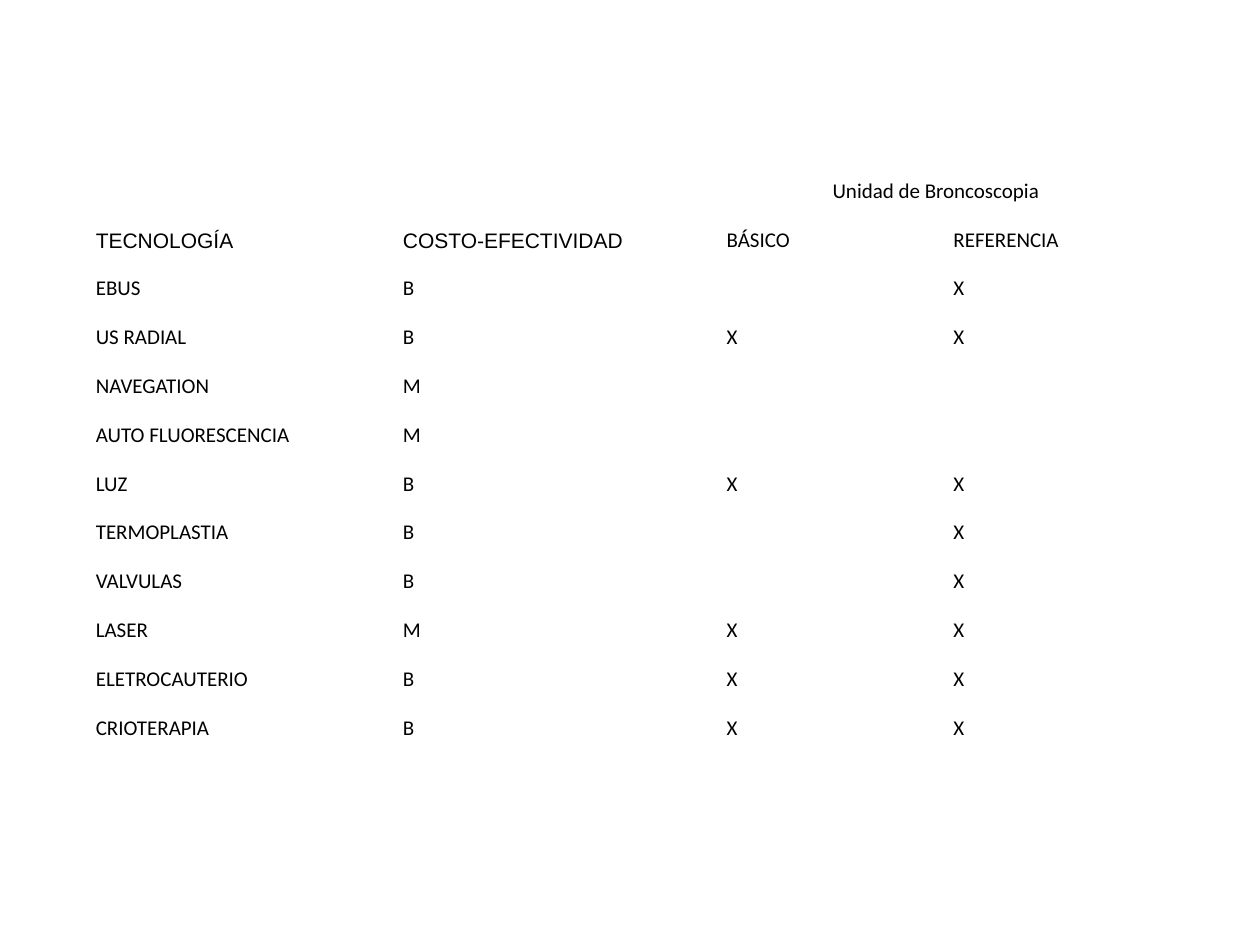
from pptx import Presentation
from pptx.util import Pt
from pptx.dml.color import RGBColor as RGB
from pptx.enum.text import PP_ALIGN as AL, MSO_ANCHOR as ANC

COLORS = {"text": "000000"}
GROUP = "Unidad de Broncoscopia"
HEADS = [("TECNOLOGÍA", "Arial"), ("COSTO-EFECTIVIDAD", "Arial"),
         ("BÁSICO", "Calibri"), ("REFERENCIA", "Calibri")]
ROWS = [
    ("EBUS", "B", "", "X"),
    ("US RADIAL", "B", "X", "X"),
    ("NAVEGATION", "M", "", ""),
    ("AUTO FLUORESCENCIA", "M", "", ""),
    ("LUZ", "B", "X", "X"),
    ("TERMOPLASTIA", "B", "", "X"),
    ("VALVULAS", "B", "", "X"),
    ("LASER", "M", "X", "X"),
    ("ELETROCAUTERIO", "B", "X", "X"),
    ("CRIOTERAPIA", "B", "X", "X"),
]
WIDTHS = [175.5, 185, 129.6, 111]
LEFT, TOP, HIGH = 54, 88.6, 27.9


def write(cell, text, font="Calibri", size=12, color="text", align=AL.LEFT):
    cell.fill.background()
    cell.vertical_anchor = ANC.BOTTOM
    cell.margin_left = cell.margin_right = cell.margin_top = Pt(0.75)
    cell.margin_bottom = Pt(0)
    if not text:
        return
    para = cell.text_frame.paragraphs[0]
    para.alignment = align
    run = para.add_run()
    run.text = text
    run.font.name = font
    run.font.size = Pt(size)
    run.font.color.rgb = RGB.from_string(COLORS[color])


def main():
    prs = Presentation()
    prs.slide_width, prs.slide_height = Pt(720), Pt(540)
    slide = prs.slides.add_slide(prs.slide_layouts[6])
    count = len(ROWS) + 2
    table = slide.shapes.add_table(count, len(WIDTHS), Pt(LEFT), Pt(TOP),
                                   Pt(sum(WIDTHS)), Pt(HIGH * count)).table
    table.first_row = table.horz_banding = False
    for col, width in zip(table.columns, WIDTHS):
        col.width = Pt(width)
    for row in table.rows:
        row.height = Pt(HIGH)

    table.cell(0, 2).merge(table.cell(0, 3))
    for c, text in enumerate(("", "", GROUP, "")):
        write(table.cell(0, c), text, align=AL.CENTER)
    for c, (text, font) in enumerate(HEADS):
        write(table.cell(1, c), text, font=font)
    for r, row in enumerate(ROWS, 2):
        for c, text in enumerate(row):
            write(table.cell(r, c), text)
    prs.save("out.pptx")


if __name__ == "__main__":
    main()
